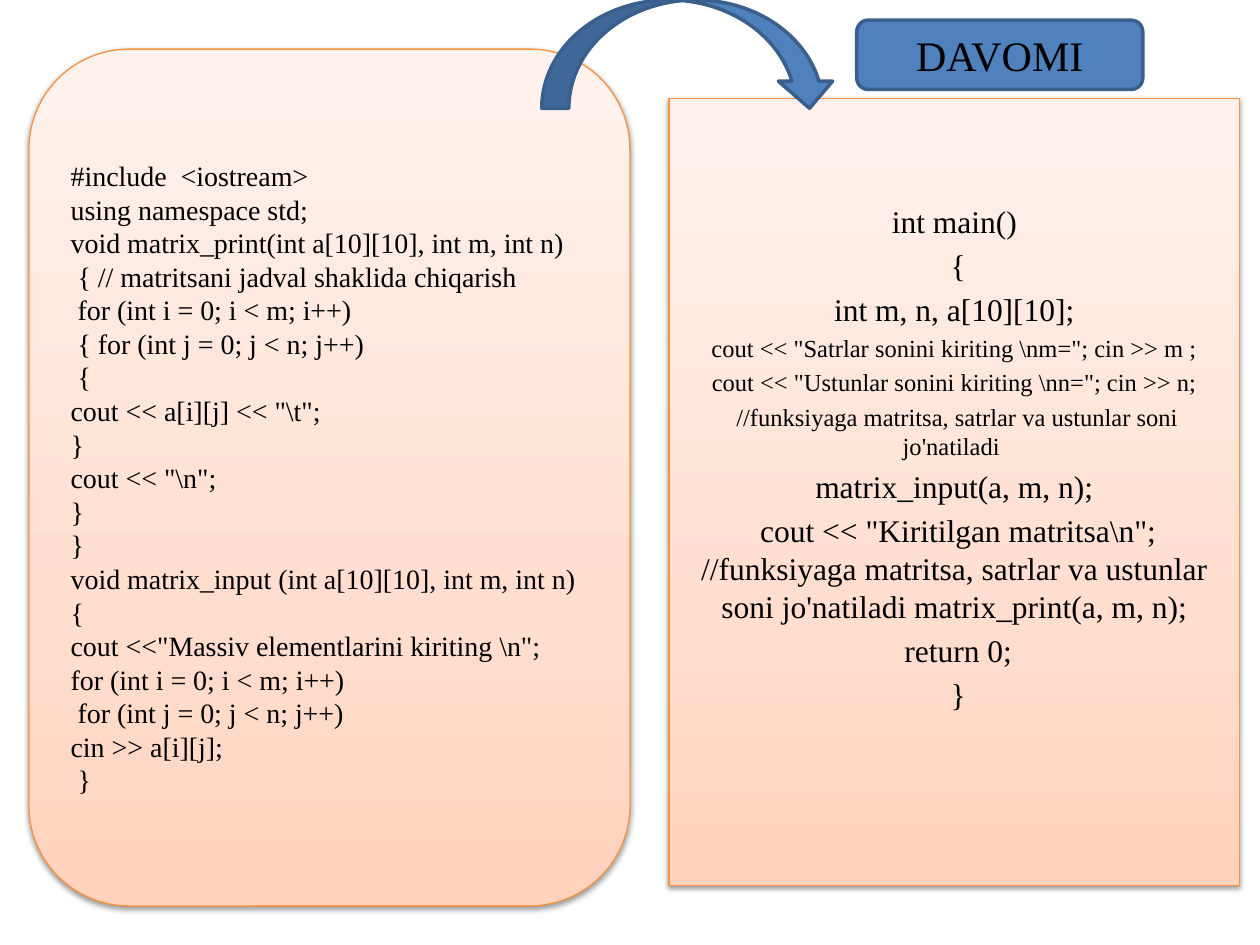
from lxml import etree
from pptx import Presentation
from pptx.dml.color import RGBColor
from pptx.enum.shapes import MSO_SHAPE
from pptx.enum.text import MSO_ANCHOR, PP_ALIGN
from pptx.oxml.ns import qn
from pptx.util import Inches, Pt

ROUNDED, RECT, ARROW = (MSO_SHAPE.ROUNDED_RECTANGLE, MSO_SHAPE.RECTANGLE,
                        MSO_SHAPE.CURVED_DOWN_ARROW)
LEFT, CENTER, MIDDLE = PP_ALIGN.LEFT, PP_ALIGN.CENTER, MSO_ANCHOR.MIDDLE

COLORS = {"text": "000000", "shadow": "000000", "blue": "4F81BD",
          "blue_line": "3A5F8C", "orange_line": "F69240"}
PEACH_STOPS = [(0, "FFD2BD"), (35, "FFDED0"), (100, "FFF2ED")]
FONT = "Times New Roman"
GRID = Inches(0.1)  # 100 columns by 75 rows

FUNCTIONS_CODE = r"""#include  <iostream>
using namespace std;
void matrix_print(int a[10][10], int m, int n)
 { // matritsani jadval shaklida chiqarish
 for (int i = 0; i < m; i++)
 { for (int j = 0; j < n; j++)
 {
cout << a[i][j] << "\t";
}
cout << "\n";
}
}
void matrix_input (int a[10][10], int m, int n) {
cout <<"Massiv elementlarini kiriting \n";
for (int i = 0; i < m; i++)
 for (int j = 0; j < n; j++)
cin >> a[i][j];
 }"""

MAIN_CODE = [
    ("int main()", 18),
    (" {", 18),
    (" int m, n, a[10][10]; ", 18),
    (r'cout << "Satrlar sonini kiriting \nm="; cin >> m ;', 14),
    (r'cout << "Ustunlar sonini kiriting \nn="; cin >> n;', 14),
    (" //funksiyaga matritsa, satrlar va ustunlar soni jo'natiladi ", 14),
    ("matrix_input(a, m, n);", 18),
    (r""" cout << "Kiritilgan matritsa\n"; //funksiyaga matritsa, satrlar va """
     "ustunlar soni jo'natiladi matrix_print(a, m, n);", 18),
    (" return 0;", 18),
    (" }", 18),
]


class SlideBuilder:
    def __init__(self, prs):
        self.s = prs.slides.add_slide(prs.slide_layouts[6])

    def shape(self, kind, box, line, width):
        sp = self.s.shapes.add_shape(kind, *(round(v * GRID) for v in box))
        sp.shadow.inherit = False
        sp.line.color.rgb = RGBColor.from_string(COLORS[line])
        sp.line.width = Pt(width)
        return sp

    def blue_shape(self, kind, box):
        sp = self.shape(kind, box, "blue_line", 2)
        sp.fill.solid()
        sp.fill.fore_color.rgb = RGBColor.from_string(COLORS["blue"])
        return sp

    def panel(self, kind, box):
        """Peach gradient panel with a soft shadow below."""
        sp = self.shape(kind, box, "orange_line", 0.75)
        sp.fill.gradient()
        sp.fill.gradient_angle = 90
        spPr = sp._element.spPr
        stops = spPr.find(".//" + qn("a:gsLst"))
        stops.clear()
        for pos, color in PEACH_STOPS:
            gs = etree.SubElement(stops, qn("a:gs"), pos=str(pos * 1000))
            etree.SubElement(gs, qn("a:srgbClr"), val=color)
        shadow = etree.SubElement(
            spPr.find(qn("a:effectLst")), qn("a:outerShdw"),
            blurRad=str(Pt(3.1)), dist=str(Pt(1.6)), dir="5400000", rotWithShape="0")
        color = etree.SubElement(shadow, qn("a:srgbClr"), val=COLORS["shadow"])
        etree.SubElement(color, qn("a:alpha"), val="38000")
        return sp

    def text(self, sp, lines, align, spacing=0, **frame):
        """Write (text, size) lines; spacing is a share of each line's size."""
        tf = sp.text_frame
        for name, value in {"word_wrap": True, "vertical_anchor": MIDDLE, **frame}.items():
            setattr(tf, name, value)
        for i, (words, size) in enumerate(lines):
            p = tf.add_paragraph() if i else tf.paragraphs[0]
            p.alignment = align
            p.space_before = Pt(spacing * size)
            r = p.add_run()
            r.text = words
            for name, value in {"name": FONT, "size": Pt(size)}.items():
                setattr(r.font, name, value)
            r.font.color.rgb = RGBColor.from_string(COLORS["text"])


def main():
    prs = Presentation()
    prs.slide_width, prs.slide_height = 100 * GRID, 75 * GRID
    slide = SlideBuilder(prs)

    functions = slide.panel(ROUNDED, (2.3, 3.9, 47.7, 68))
    slide.text(functions, [(row, 16) for row in FUNCTIONS_CODE.splitlines()], LEFT)

    main_panel = slide.panel(RECT, (53.1, 7.8, 45.3, 62.5))
    slide.text(main_panel, MAIN_CODE, CENTER, spacing=0.2, margin_bottom=Inches(0.6))

    slide.blue_shape(ARROW, (43, 0, 23.4, 8.6))
    heading = slide.blue_shape(ROUNDED, (68, 1.6, 22.7, 5.5))
    slide.text(heading, [("DAVOMI", 24)], CENTER)

    prs.save("out.pptx")


if __name__ == "__main__":
    main()
